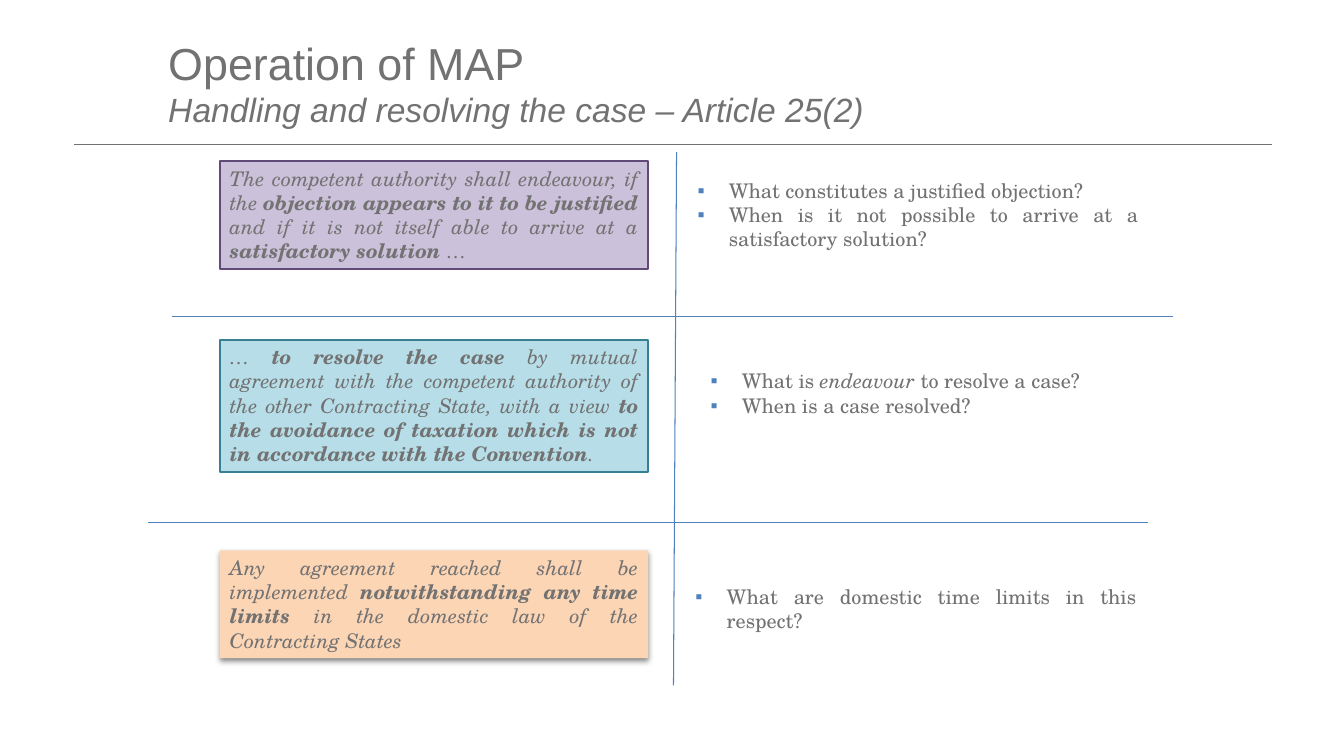
"""Builds the slide on handling and resolving a case under Article 25(2)."""
from dataclasses import dataclass

import lxml.etree
import pptx
import pptx.dml.color
import pptx.enum.dml
import pptx.enum.shapes
import pptx.enum.text
import pptx.oxml
import pptx.oxml.ns
import pptx.util

SLIDE_WIDTH = pptx.util.Inches(13.33)
SLIDE_HEIGHT = pptx.util.Inches(7.5)
GREY = "727272"
BLUE = "4F81BD"
BODY = {"name": "TeX Gyre Schola", "size": pptx.util.Pt(14.4)}
HEADING = {"name": "Arial", "size": pptx.util.Pt(32)}
SUBHEADING = {"name": "Arial", "size": pptx.util.Pt(24), "italic": True}
QUOTE = BODY | {"italic": True}
QUOTE_STRESS = QUOTE | {"bold": True}
INDENT = pptx.util.Inches(0.31)
NAMESPACE = pptx.oxml.ns.nsdecls("a")
SHADOW = (
    f'<a:effectLst {NAMESPACE}><a:outerShdw blurRad="50800" dist="25400" dir="5400000" '
    'rotWithShape="0"><a:srgbClr val="000000"><a:alpha val="45000"/></a:srgbClr>'
    "</a:outerShdw></a:effectLst>"
)


@dataclass(frozen=True)
class Rule:
    """A straight line, in percent of the slide's width and height."""
    start_x: float
    start_y: float
    end_x: float
    end_y: float
    color: str = BLUE
    points: float = 0.75


@dataclass(frozen=True)
class Quote:
    """A filled quotation from the Article; asterisks enclose stressed words."""
    top: float
    height: float
    text: str
    fill: str
    outline: str | None = None


@dataclass(frozen=True)
class Questions:
    """A bulleted list of questions; asterisks enclose stressed words."""
    left: float
    top: float
    width: float
    height: float
    items: tuple[str, ...]


QUOTE_LEFT, QUOTE_WIDTH = 16.35, 31.88
RULES = (
    Rule(5.48, 19.07, 94.67, 19.07, GREY, 0.5),
    Rule(50.34, 20.13, 50.11, 90.67),
    Rule(12.83, 41.87, 87.25, 41.87),
    Rule(11.03, 69.07, 85.45, 69.07),
)
QUOTES = (
    Quote(21.33, 14.27,
          "The competent authority shall endeavour, if the *objection appears to it to be "
          "justified* and if it is not itself able to arrive at a *satisfactory solution *…",
          "CCC1DA", "5F4A78"),
    Quote(44.93, 17.47,
          "… *to resolve the case *by mutual agreement with the competent authority of the "
          "other Contracting State, with a view *to the avoidance of taxation which is not "
          "in accordance with the Convention*.",
          "B7DEE8", "377F92"),
    Quote(72.8, 14.27,
          "Any agreement reached shall be implemented *notwithstanding any time limits* "
          "in the domestic law of the Contracting States",
          "FCD5B5"),
)
QUESTIONS = (
    Questions(51.16, 22.93, 34.28, 11.07,
              ("What constitutes a justified objection?",
               "When is it not possible to arrive at a satisfactory solution?")),
    Questions(52.14, 48.13, 31.88, 7.87,
              ("What is *endeavour* to resolve a case?", "When is a case resolved?")),
    Questions(51.01, 76.67, 34.28, 4.53,
              ("What are domestic time limits in this respect?",)),
)


def rgb(color: str) -> pptx.dml.color.RGBColor:
    """Turn a hex string into a colour."""
    return pptx.dml.color.RGBColor.from_string(color)


def across(percent: float) -> int:
    """Turn a share of the slide's width into a length."""
    return round(SLIDE_WIDTH * percent / 100)


def down(percent: float) -> int:
    """Turn a share of the slide's height into a length."""
    return round(SLIDE_HEIGHT * percent / 100)


def add_run(paragraph, text: str, style: dict) -> None:
    """Append a grey run with the given font values."""
    run = paragraph.add_run()
    run.text = text
    for name, value in style.items():
        setattr(run.font, name, value)
    run.font.color.rgb = rgb(GREY)


def add_marked_text(paragraph, text: str, plain: dict, stress: dict) -> None:
    """Write justified text whose asterisks switch between two styles."""
    paragraph.alignment = pptx.enum.text.PP_ALIGN.JUSTIFY
    for index, part in enumerate(text.split("*")):
        if part:
            add_run(paragraph, part, stress if index % 2 else plain)


def add_bullet(paragraph) -> None:
    """Give a paragraph a hanging blue square bullet."""
    properties = paragraph._p.get_or_add_pPr()
    properties.set("marL", str(INDENT))
    properties.set("indent", str(-INDENT))
    for markup in (f'<a:buClr {NAMESPACE}><a:srgbClr val="{BLUE}"/></a:buClr>',
                   f'<a:buFont {NAMESPACE} typeface="Arial"/>',
                   f'<a:buChar {NAMESPACE} char="▪"/>'):
        properties.append(pptx.oxml.parse_xml(markup))


def add_title(slide) -> None:
    """Add the two-line heading."""
    shape = slide.shapes.add_textbox(across(11.78), down(3.47), across(81.1), down(14.93))
    shape.text_frame.word_wrap = True
    shape.text_frame.vertical_anchor = pptx.enum.text.MSO_ANCHOR.MIDDLE
    paragraph = shape.text_frame.paragraphs[0]
    add_run(paragraph, "Operation of MAP", HEADING)
    paragraph.add_line_break()
    add_run(paragraph, "Handling and resolving the case – Article 25(2)", SUBHEADING)


def add_rule(slide, rule: Rule) -> None:
    """Draw a line without a shadow."""
    connector = slide.shapes.add_connector(
        pptx.enum.shapes.MSO_CONNECTOR.STRAIGHT, across(rule.start_x), down(rule.start_y),
        across(rule.end_x), down(rule.end_y))
    connector.line.color.rgb = rgb(rule.color)
    connector.line.width = pptx.util.Pt(rule.points)
    lxml.etree.SubElement(connector._element.spPr, pptx.oxml.ns.qn("a:effectLst"))


def add_quote(slide, quote: Quote) -> None:
    """Draw a quotation, outlined or else with a soft shadow."""
    shape = slide.shapes.add_shape(
        pptx.enum.shapes.MSO_SHAPE.RECTANGLE, across(QUOTE_LEFT), down(quote.top),
        across(QUOTE_WIDTH), down(quote.height))
    shape.fill.solid()
    shape.fill.fore_color.rgb = rgb(quote.fill)
    if quote.outline:
        shape.line.color.rgb = rgb(quote.outline)
        shape.line.width = pptx.util.Pt(1.5)
        shape.shadow.inherit = False
    else:
        shape.line.fill.background()
        shape._element.spPr.append(pptx.oxml.parse_xml(SHADOW))
    frame = shape.text_frame
    frame.word_wrap = True
    frame.auto_size = pptx.enum.text.MSO_AUTO_SIZE.SHAPE_TO_FIT_TEXT
    frame.vertical_anchor = pptx.enum.text.MSO_ANCHOR.TOP
    add_marked_text(frame.paragraphs[0], quote.text, QUOTE, QUOTE_STRESS)


def add_questions(slide, questions: Questions) -> None:
    """Write a list of questions."""
    shape = slide.shapes.add_textbox(across(questions.left), down(questions.top),
                                     across(questions.width), down(questions.height))
    frame = shape.text_frame
    frame.word_wrap = True
    frame.auto_size = pptx.enum.text.MSO_AUTO_SIZE.SHAPE_TO_FIT_TEXT
    for index, item in enumerate(questions.items):
        paragraph = frame.add_paragraph() if index else frame.paragraphs[0]
        add_bullet(paragraph)
        add_marked_text(paragraph, item, BODY, QUOTE)


def main() -> None:
    """Build and save the presentation."""
    presentation = pptx.Presentation()
    presentation.slide_width = SLIDE_WIDTH
    presentation.slide_height = SLIDE_HEIGHT
    slide = presentation.slides.add_slide(presentation.slide_layouts[6])
    add_title(slide)
    for rule in RULES:
        add_rule(slide, rule)
    for quote, questions in zip(QUOTES, QUESTIONS):
        add_quote(slide, quote)
        add_questions(slide, questions)
    presentation.save("out.pptx")


if __name__ == "__main__":
    main()
